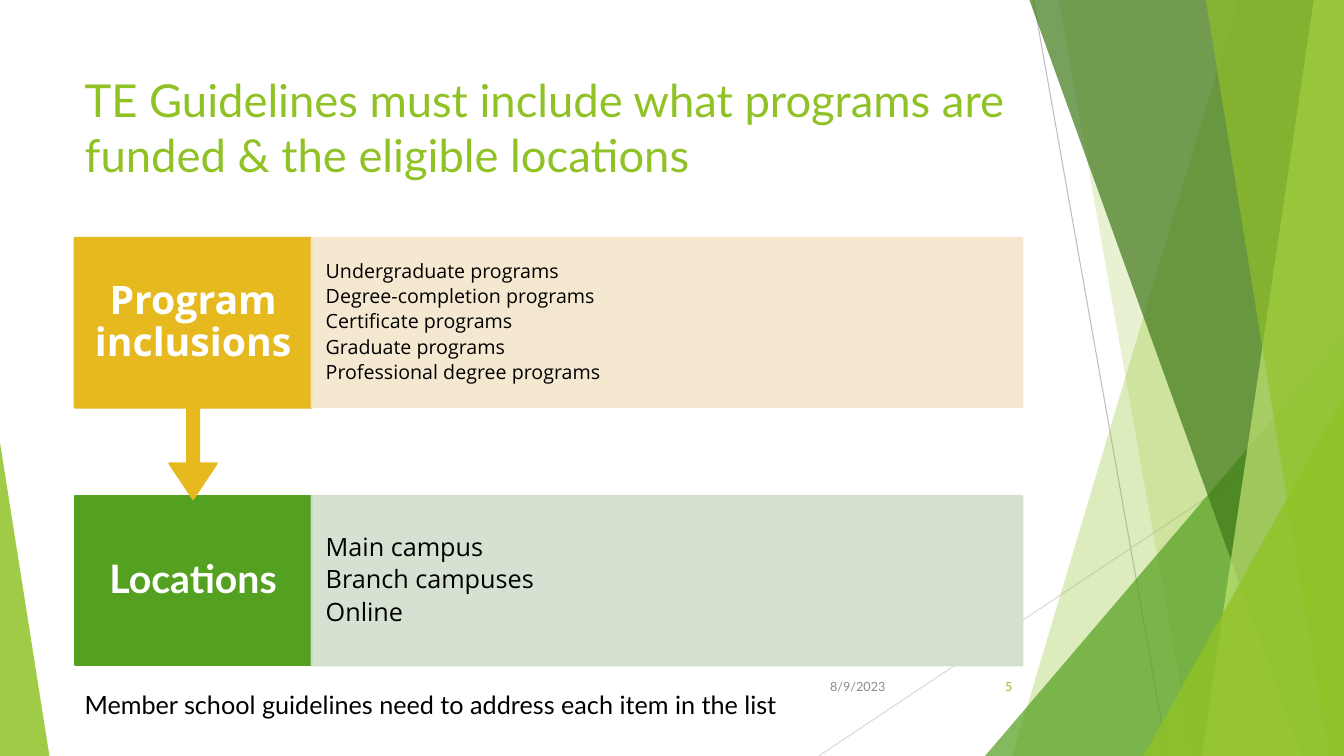
from pptx import Presentation
from pptx.dml.color import RGBColor
from pptx.enum.shapes import MSO_CONNECTOR, MSO_SHAPE
from pptx.enum.text import MSO_ANCHOR, MSO_AUTO_SIZE, PP_ALIGN
from pptx.oxml.ns import qn
from pptx.util import Pt
from lxml.etree import SubElement

PX = 9144
WIDTH, HEIGHT = 1333, 750
LIME, GREEN, GOLD = "90C226", "54A021", "E6B91E"
WHITE, BLACK = "FFFFFF", "000000"


def paint(fill, color, opacity=100):
    fill.solid()
    fill.fore_color.rgb = RGBColor.from_string(color)
    if opacity < 100:
        color_element = fill._xPr.find(qn("a:solidFill"))[0]
        SubElement(color_element, qn("a:alpha"), val=str(opacity * 1000))


def write(shape, lines, font, size, color, bold=False, align=PP_ALIGN.LEFT,
          anchor=MSO_ANCHOR.MIDDLE, insets=(10, 5), spacing=1, after=0):
    across, down = (inset * PX for inset in insets)
    frame = shape.text_frame
    frame_format = {
        "word_wrap": True, "auto_size": MSO_AUTO_SIZE.NONE, "vertical_anchor": anchor,
        "margin_left": across, "margin_right": across,
        "margin_top": down, "margin_bottom": down,
    }
    for name, value in frame_format.items():
        setattr(frame, name, value)
    frame.text = "\n".join(lines)
    paragraph_format = {
        "alignment": align, "line_spacing": spacing,
        "space_before": Pt(0), "space_after": Pt(after),
    }
    for paragraph in frame.paragraphs:
        for name, value in paragraph_format.items():
            setattr(paragraph, name, value)
        run_font = paragraph.runs[0].font
        for name, value in {"name": font, "size": Pt(size), "bold": bold}.items():
            setattr(run_font, name, value)
        paint(run_font.fill, color)


presentation = Presentation()
presentation.slide_width = WIDTH * PX
presentation.slide_height = HEIGHT * PX
slide = presentation.slides.add_slide(presentation.slide_layouts[5])
shapes = slide.shapes

for ends, color in [((1025, 0, 1158, HEIGHT), "BFBFBF"),
                    ((WIDTH, 403, 812, HEIGHT), "D9D9D9")]:
    connector = shapes.add_connector(MSO_CONNECTOR.STRAIGHT, *(value * PX for value in ends))
    connector.line.width = Pt(0.75)
    paint(connector.line.fill, color)
    SubElement(connector._element.spPr, qn("a:effectLst"))

facets = [
    ("band", (1228, 1004), LIME, 30),
    ("band", (1050, 1183), LIME, 20),
    ("triangle", (977, 333, 356, 417, 1), GREEN, 72),
    ("band", (1021, 1291), "3F7819", 70),
    ("band", (1303, 1192), "C0E474", 70),
    ("band", (1196, 1318), LIME, 65),
    ("triangle", (1134, 393, 199, 357, 1), LIME, 80),
    ("triangle", (0, 439, 49, 311, 0), LIME, 85),
]
for kind, geometry, color, opacity in facets:
    if kind == "band":
        top_x, bottom_x = geometry
        builder = shapes.build_freeform(top_x, 0, scale=PX)
        builder.add_line_segments([(WIDTH, 0), (WIDTH, HEIGHT), (bottom_x, HEIGHT)], close=True)
        facet = builder.convert_to_shape()
    else:
        *box, apex = geometry
        facet = shapes.add_shape(MSO_SHAPE.ISOSCELES_TRIANGLE, *(value * PX for value in box))
        facet.adjustments[0] = apex
    facet.shadow.inherit = False
    facet.line.fill.background()
    paint(facet.fill, color, opacity)

LEFT, LABEL_WIDTH, PANEL_WIDTH, ROW_HEIGHT = 74, 235, 705, 168
rows = [
    (492, MSO_SHAPE.RECTANGLE, ROW_HEIGHT, [], "Locations", "Lato", GREEN, "D1DFCD", 18, 25,
     ["Main campus", "Branch campuses", "Online"]),
    (236, MSO_SHAPE.DOWN_ARROW_CALLOUT, 259, [0.05, 0.1, 0.15, 0.65],
     "Program inclusions", "Open Sans", GOLD, "F5E6CD", 14, 19,
     ["Undergraduate programs", "Degree-completion programs", "Certificate programs",
      "Graduate programs", "Professional degree programs"]),
]
for (top, preset, label_height, adjustments, heading, heading_font,
     label_color, panel_color, size, inset, items) in rows:
    label = shapes.add_shape(preset, LEFT * PX, top * PX, LABEL_WIDTH * PX, label_height * PX)
    for index, value in enumerate(adjustments):
        label.adjustments[index] = value
    panel = shapes.add_shape(MSO_SHAPE.RECTANGLE, (LEFT + LABEL_WIDTH) * PX, top * PX,
                             PANEL_WIDTH * PX, ROW_HEIGHT * PX)
    for shape, color, opacity in [(label, label_color, 100), (panel, panel_color, 90)]:
        shape.shadow.inherit = False
        shape.line.width = Pt(1.5)
        paint(shape.fill, color, opacity)
        paint(shape.line.fill, color, opacity)
    write(label, [heading], heading_font, 28, WHITE, bold=True, align=PP_ALIGN.CENTER,
          insets=(17, 22), spacing=0.9)
    write(panel, items, "Open Sans", size, BLACK, insets=(14, inset),
          spacing=0.9, after=size * 0.2)

title = shapes.title
title_box = {"left": LEFT, "top": 67, "width": 940, "height": 144}
for name, value in title_box.items():
    setattr(title, name, value * PX)
write(title, ["TE Guidelines must include what programs are funded & the eligible locations"],
      "Lato", 32.4, LIME, anchor=MSO_ANCHOR.TOP)

captions = [
    ((788, 661, 100, 40), "8/9/2023", 9, "8C8C8C", PP_ALIGN.RIGHT, MSO_ANCHOR.MIDDLE),
    ((939, 661, 75, 40), "5", 9, LIME, PP_ALIGN.RIGHT, MSO_ANCHOR.MIDDLE),
    ((LEFT, 679, 805, 40), "Member school guidelines need to address each item in the list",
     18, BLACK, PP_ALIGN.LEFT, MSO_ANCHOR.TOP),
]
for box, text, size, color, align, anchor in captions:
    caption = shapes.add_textbox(*(value * PX for value in box))
    write(caption, [text], "Lato", size, color, align=align, anchor=anchor)

presentation.save("out.pptx")
